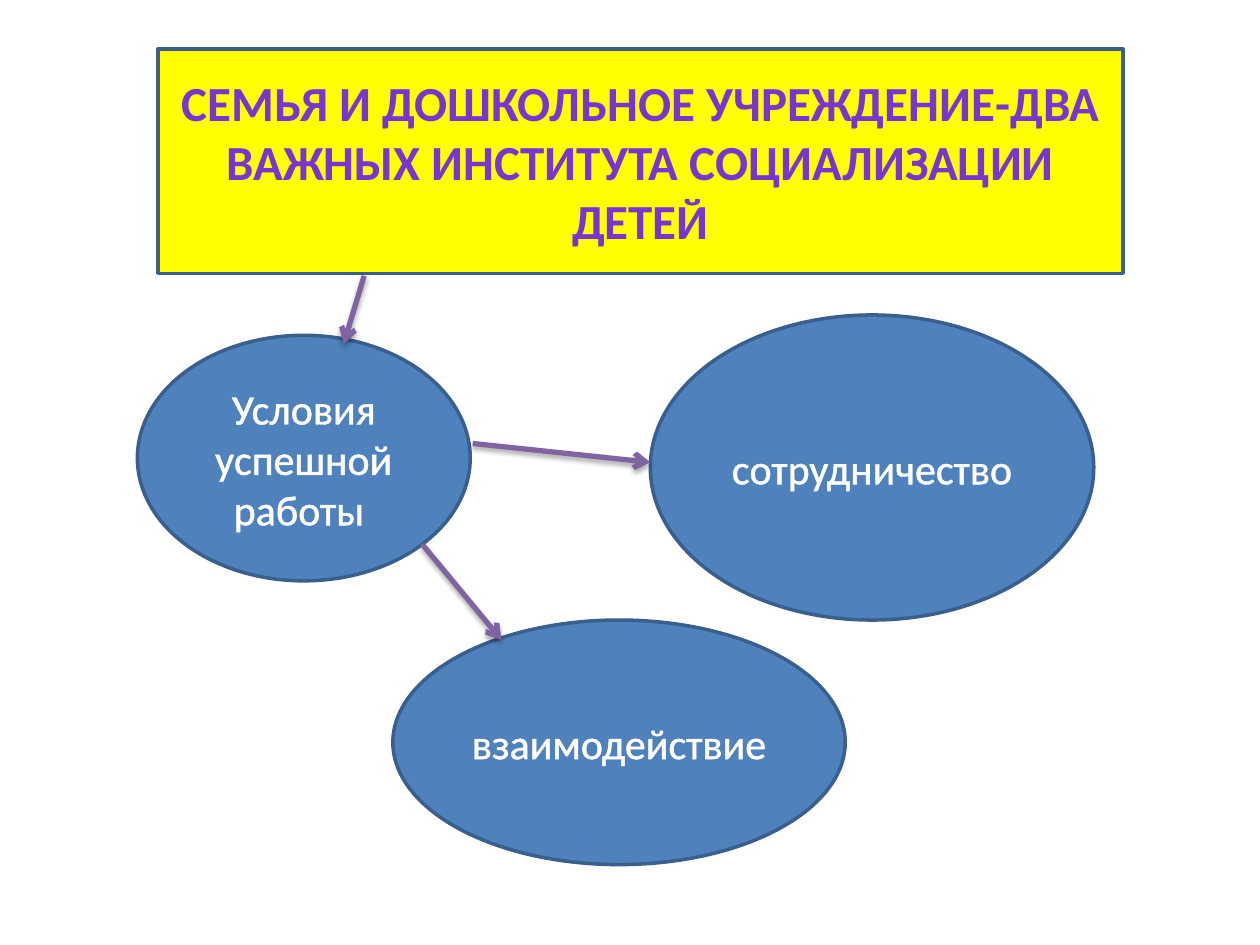
from lxml import etree
from pptx import Presentation
from pptx.dml.color import RGBColor
from pptx.enum import shapes, text
from pptx.oxml import parse_xml
from pptx.oxml.ns import nsdecls
from pptx.util import Cm, Pt

# Content: positions are left, top, width, height in cm
TITLE = "СЕМЬЯ И ДОШКОЛЬНОЕ УЧРЕЖДЕНИЕ-ДВА ВАЖНЫХ ИНСТИТУТА СОЦИАЛИЗАЦИИ ДЕТЕЙ"
TITLE_PLACE = (3.18, 0.99, 19.46, 4.52)
TITLE_GRADIENT = [(0, "3D1B67"), (43, "7B34D2"), (48, "7330C4"), (100, "3D1B67")]
OVALS = [
    (["Условия успешной", "работы "], (2.77, 6.76, 6.71, 4.95)),
    (["сотрудничество"], (13.11, 6.35, 8.94, 6.15)),
    (["взаимодействие"], (7.92, 12.5, 9.12, 4.93)),
]
ARROWS = [  # start x, start y, end x, end y
    (9.53, 8.94, 13.11, 9.32),
    (8.51, 10.97, 10.11, 12.9),
    (7.34, 5.56, 6.93, 6.93),
]
BORDER, WHITE = "3A5F8C", "FFFFFF"


def color(value):
    return RGBColor.from_string(value)


def xml(tag, attributes, inner):
    return parse_xml(f'<a:{tag} {nsdecls("a")} {attributes}>{inner}</a:{tag}>')


def paint(shape, fill):
    shape.fill.solid()
    shape.fill.fore_color.rgb = color(fill)
    shape.line.color.rgb = color(BORDER)
    shape.line.width = Pt(2)


def write(shape, lines, size, font_color, outline, outline_width, bold=False):
    frame = shape.text_frame
    frame.word_wrap = True
    frame.auto_size = text.MSO_AUTO_SIZE.NONE
    frame.vertical_anchor = text.MSO_ANCHOR.MIDDLE
    spans = []
    for index, line in enumerate(lines):
        para = frame.add_paragraph() if index else frame.paragraphs[0]
        para.alignment = text.PP_ALIGN.CENTER
        span = para.add_run()
        span.text = line
        span.font.name = "Calibri"
        span.font.size = Pt(size)
        span.font.bold = bold
        span.font.color.rgb = color(font_color)
        edge = f'<a:solidFill><a:srgbClr val="{outline}"/></a:solidFill>'
        span.font._element.insert(0, xml("ln", f'w="{Pt(outline_width)}"', edge))
        spans.append(span)
    return spans


deck = Presentation()
deck.slide_width, deck.slide_height = Cm(25.4), Cm(19.05)
page = deck.slides.add_slide(deck.slide_layouts[5])

# Title with gradient letters
title = page.shapes.title
title.left, title.top, title.width, title.height = map(Cm, TITLE_PLACE)
paint(title, "FFFF00")
span = write(title, [TITLE], 28, "7B34D2", "5E457C", 0.71, bold=True)[0]
stops = "".join(f'<a:gs pos="{place * 1000}"><a:srgbClr val="{value}"/></a:gs>'
                for place, value in TITLE_GRADIENT)
gradient = xml("gradFill", "", f'<a:gsLst>{stops}</a:gsLst><a:lin ang="5400000"/>')
properties = span.font._element
properties.replace(properties.find("a:solidFill", {"a": etree.QName(gradient).namespace}), gradient)

# Ovals
for lines, place in OVALS:
    oval = page.shapes.add_shape(shapes.MSO_SHAPE.OVAL, *map(Cm, place))
    oval.shadow.inherit = False
    paint(oval, "4F81BD")
    write(oval, lines, 24, WHITE, WHITE, 1.45)

# Arrows with a soft shadow
for ends in ARROWS:
    arrow = page.shapes.add_connector(shapes.MSO_CONNECTOR.STRAIGHT, *map(Cm, ends))
    arrow.line.color.rgb = color("8064A2")
    arrow.line.width = Pt(3)
    arrow.line._get_or_add_ln().append(xml("tailEnd", 'type="arrow"', ""))
    shadow = (f'<a:outerShdw blurRad="{Pt(3.1)}" dist="{Pt(1.8)}" dir="5400000" rotWithShape="0">'
              '<a:srgbClr val="000000"><a:alpha val="35000"/></a:srgbClr></a:outerShdw>')
    arrow._element.spPr.append(xml("effectLst", "", shadow))

deck.save("out.pptx")
